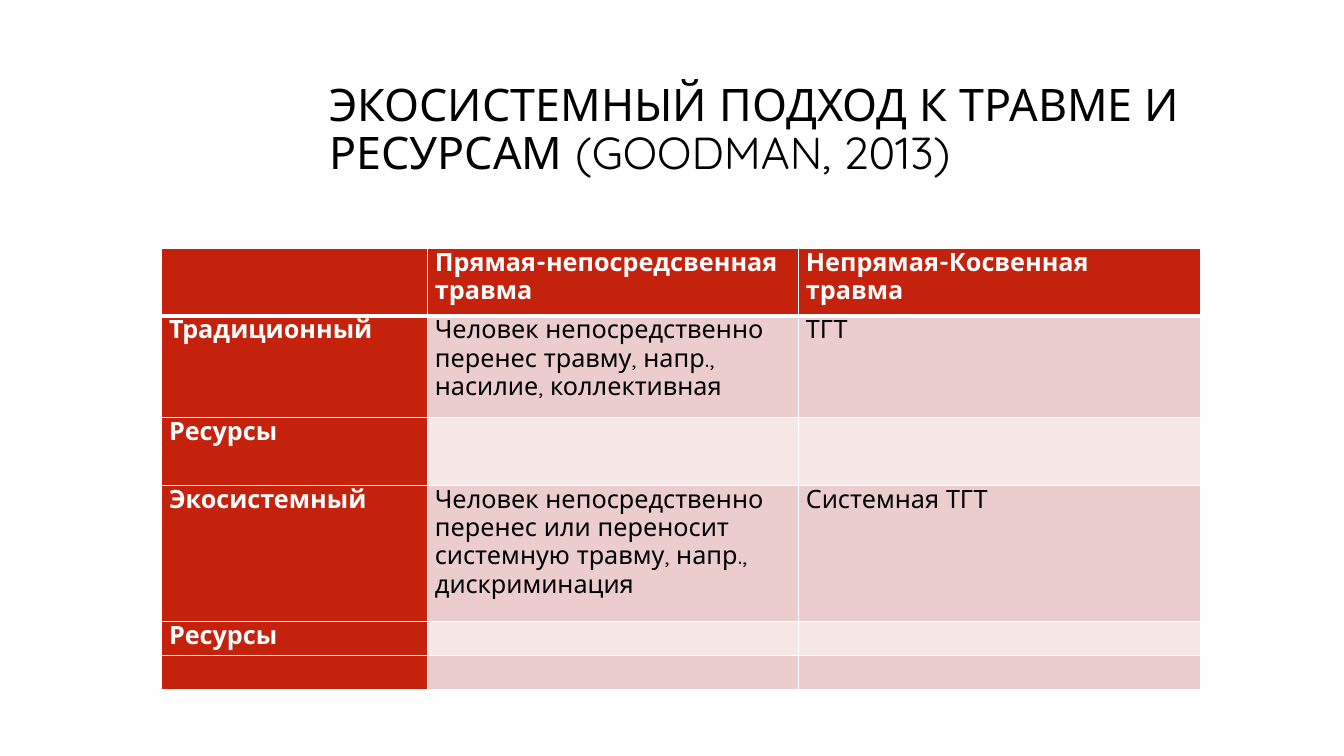
from lxml.etree import SubElement
from pptx import Presentation
from pptx.dml.color import RGBColor
from pptx.enum.text import MSO_ANCHOR
from pptx.oxml.ns import qn
from pptx.util import Cm, Pt

BLACK = RGBColor(0x00, 0x00, 0x00)
WHITE = RGBColor(0xFF, 0xFF, 0xFF)
RED = RGBColor(0xC4, 0x22, 0x0D)
PINK = RGBColor(0xEA, 0xCD, 0xCC)
PALE_PINK = RGBColor(0xF5, 0xE8, 0xE7)

TITLE = "ЭКОСИСТЕМНЫЙ ПОДХОД К ТРАВМЕ И РЕСУРСАМ (GOODMAN, 2013)"
ROWS = [
    ("", "Прямая-непосредсвенная травма", "Непрямая-Косвенная травма"),
    ("Традиционный",
     "Человек непосредственно перенес травму, напр., насилие, коллективная",
     "ТГТ"),
    ("Ресурсы", "", ""),
    ("Экосистемный",
     "Человек непосредственно перенес или переносит системную травму, "
     "напр., дискриминация",
     "Системная ТГТ"),
    ("Ресурсы", "", ""),
    ("", "", ""),
]
COLUMN_WIDTHS = [6.7, 9.35, 10.13]
ROW_HEIGHTS = [1.7, 2.56, 1.71, 3.43, 0.86, 0.86]


def write_text(paragraph, text, size, color, bold):
    paragraph.line_spacing = 0.9
    if text:
        run = paragraph.add_run()
        run.text = text
        font_format = {"name": "Quicksand", "size": Pt(size), "bold": bold}
        for attribute, value in font_format.items():
            setattr(run.font, attribute, value)
        run.font.color.rgb = color


def add_border(cell, side, width):
    line = SubElement(cell._tc.get_or_add_tcPr(), qn(f"a:ln{side}"), w=str(Pt(width)))
    fill = SubElement(line, qn("a:solidFill"))
    SubElement(fill, qn("a:srgbClr"), val=str(WHITE))


presentation = Presentation()
presentation.slide_width = Cm(33.87)
presentation.slide_height = Cm(19.05)
slide = presentation.slides.add_slide(presentation.slide_layouts[6])

title = slide.shapes.add_textbox(Cm(8.05), Cm(2.13), Cm(23.93), Cm(3.58))
title_format = {
    "word_wrap": True,
    "vertical_anchor": MSO_ANCHOR.MIDDLE,
    "margin_bottom": Cm(1.37),
}
for attribute, value in title_format.items():
    setattr(title.text_frame, attribute, value)
write_text(title.text_frame.paragraphs[0], TITLE, 32, BLACK, False)

table = slide.shapes.add_table(
    len(ROWS), len(COLUMN_WIDTHS), Cm(4.07), Cm(6.26),
    Cm(sum(COLUMN_WIDTHS)), Cm(sum(ROW_HEIGHTS)),
).table
for column, width in zip(table.columns, COLUMN_WIDTHS):
    column.width = Cm(width)
for row, height in zip(table.rows, ROW_HEIGHTS):
    row.height = Cm(height)

cell_margins = {
    "margin_left": Cm(0.19),
    "margin_right": Cm(0.19),
    "margin_top": Cm(0),
    "margin_bottom": Cm(0),
}
for row_index, texts in enumerate(ROWS):
    for column_index, text in enumerate(texts):
        cell = table.cell(row_index, column_index)
        for attribute, value in cell_margins.items():
            setattr(cell, attribute, value)
        border_widths = {
            "L": 1,
            "R": 1,
            "T": 3 if row_index == 1 else 1,
            "B": 3 if row_index == 0 else 1,
        }
        for side, width in border_widths.items():
            add_border(cell, side, width)
        is_heading = row_index == 0 or column_index == 0
        band_color = PINK if row_index % 2 else PALE_PINK
        cell.fill.solid()
        cell.fill.fore_color.rgb = RED if is_heading else band_color
        text_color = WHITE if is_heading else BLACK
        write_text(cell.text_frame.paragraphs[0], text, 18, text_color, is_heading)

presentation.save("out.pptx")
